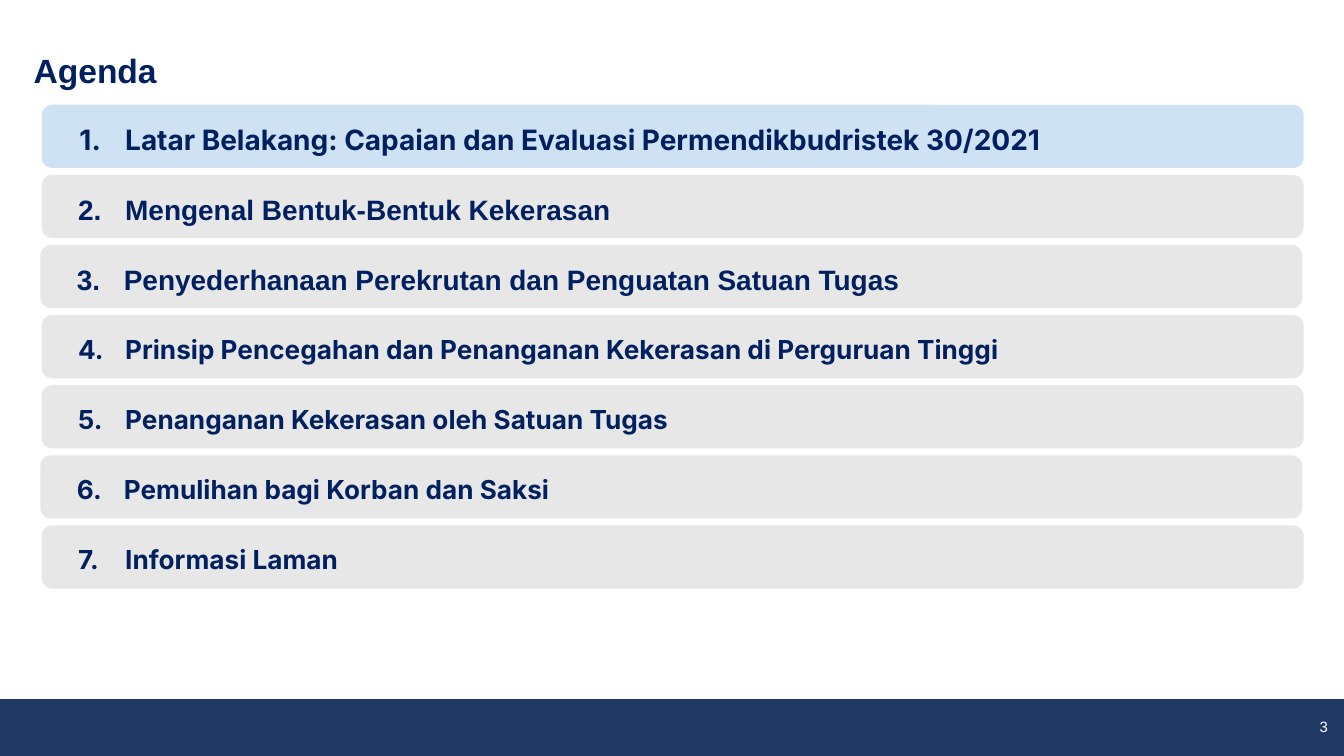
from dataclasses import dataclass

from lxml import etree
from pptx import Presentation
from pptx.dml import color
from pptx.enum import shapes, text
from pptx.oxml import ns
from pptx.util import Inches, Pt

NAVY = "002060"
FOOTER_BLUE = "1F3864"
WHITE = "FFFFFF"
ACTIVE_BLUE = "CFE2F3"
IDLE_GREY = "D8D8D8"

SLIDE_WIDTH = 10
SLIDE_HEIGHT = SLIDE_WIDTH * 9 / 16
FOOTER_TOP = 5.21
FIRST_TOP, LAST_TOP = 0.78, 3.91
BAR_WIDTH, BAR_HEIGHT = 9.39, 0.47


@dataclass
class AgendaItem:
    label: str
    font: str = "Inter"
    size: int = 14
    left: float = 0.31
    active: bool = False


AGENDA = [
    AgendaItem("Latar Belakang: Capaian dan Evaluasi Permendikbudristek 30/2021",
               size=15, active=True),
    AgendaItem("Mengenal Bentuk-Bentuk Kekerasan", "Arial", 15),
    AgendaItem("Penyederhanaan Perekrutan dan Penguatan Satuan Tugas", "Arial", 15, 0.3),
    AgendaItem("Prinsip Pencegahan dan Penanganan Kekerasan di Perguruan Tinggi"),
    AgendaItem("Penanganan Kekerasan oleh Satuan Tugas"),
    AgendaItem("Pemulihan bagi Korban dan Saksi", left=0.3),
    AgendaItem("Informasi Laman"),
]


def rgb(value: str) -> color.RGBColor:
    return color.RGBColor.from_string(value)


def add_child(parent, tag: str, **attributes: str):
    return etree.SubElement(parent, ns.qn(tag), attributes)


def set_frame(frame, side: float, edge: float) -> None:
    """Wrap the text, centre it vertically and set its margins."""
    frame.word_wrap = True
    frame.auto_size = text.MSO_AUTO_SIZE.NONE
    frame.vertical_anchor = text.MSO_ANCHOR.MIDDLE
    frame.margin_left = frame.margin_right = Inches(side)
    frame.margin_top = frame.margin_bottom = Inches(edge)


def add_span(para, words: str, font: str, size: int, shade: str, bold: bool = False) -> None:
    span = para.add_run()
    span.text = words
    span.font.name = font
    span.font.size = Pt(size)
    span.font.bold = bold
    span.font.color.rgb = rgb(shade)


def set_indent(para, left: float, first: float) -> None:
    properties = para._p.get_or_add_pPr()
    properties.set("marL", str(Inches(left)))
    properties.set("indent", str(Inches(first)))


def set_number(para, number: int, font: str) -> None:
    """Number the paragraph automatically, starting at the given value."""
    properties = para._p.get_or_add_pPr()
    add_child(add_child(properties, "a:buClr"), "a:srgbClr", val=NAVY)
    add_child(properties, "a:buFont", typeface=font)
    add_child(properties, "a:buAutoNum", type="arabicPeriod", startAt=str(number))


def add_footer(page, number: str) -> None:
    band = page.shapes.add_shape(shapes.MSO_SHAPE.RECTANGLE, 0, Inches(FOOTER_TOP),
                                 Inches(SLIDE_WIDTH), Inches(SLIDE_HEIGHT - FOOTER_TOP))
    band.shadow.inherit = False
    band.fill.solid()
    band.fill.fore_color.rgb = rgb(FOOTER_BLUE)
    band.line.color.rgb = rgb(FOOTER_BLUE)
    band.line.width = Pt(1)

    box = page.shapes.add_textbox(Inches(9.3), Inches(5.31), Inches(0.65), Inches(0.2))
    set_frame(box.text_frame, 0.07, 0.04)
    para = box.text_frame.paragraphs[0]
    para.alignment = text.PP_ALIGN.RIGHT
    add_span(para, number, "Arial", 8, WHITE)


def set_title(page, words: str) -> None:
    title = page.shapes.title
    title.left, title.top = Inches(0.11), Inches(0.22)
    title.width, title.height = Inches(9.62), Inches(0.61)
    set_frame(title.text_frame, 0.04, 0.02)
    para = title.text_frame.paragraphs[0]
    para.alignment = text.PP_ALIGN.LEFT
    set_indent(para, 0.1, 0)
    add_span(para, words, "Arial", 18, NAVY, bold=True)


def add_agenda_bar(page, item: AgendaItem, number: int, top: float) -> None:
    bar = page.shapes.add_shape(shapes.MSO_SHAPE.ROUNDED_RECTANGLE, Inches(item.left),
                                Inches(top), Inches(BAR_WIDTH), Inches(BAR_HEIGHT))
    bar.adjustments[0] = 0.17
    bar.shadow.inherit = False
    bar.line.fill.background()
    bar.fill.solid()
    bar.fill.fore_color.rgb = rgb(ACTIVE_BLUE if item.active else IDLE_GREY)
    if not item.active:
        shade = bar._element.spPr.find(ns.qn("a:solidFill"))[0]
        add_child(shade, "a:alpha", val="60000")

    set_frame(bar.text_frame, 0.1, 0.05)
    para = bar.text_frame.paragraphs[0]
    para.alignment = text.PP_ALIGN.LEFT
    para.line_spacing = 1.15
    set_indent(para, 0.5, -0.34 if item.active else -0.35)
    set_number(para, number, item.font)
    add_span(para, item.label, item.font, item.size, NAVY, bold=True)


def main() -> None:
    deck = Presentation()
    deck.slide_width, deck.slide_height = Inches(SLIDE_WIDTH), Inches(SLIDE_HEIGHT)
    page = deck.slides.add_slide(deck.slide_layouts[5])  # title only

    add_footer(page, "3")
    set_title(page, "Agenda")

    # Evenly spaced agenda bars
    pitch = (LAST_TOP - FIRST_TOP) / (len(AGENDA) - 1)
    for index, item in enumerate(AGENDA):
        add_agenda_bar(page, item, index + 1, FIRST_TOP + index * pitch)

    deck.save("out.pptx")


if __name__ == "__main__":
    main()
